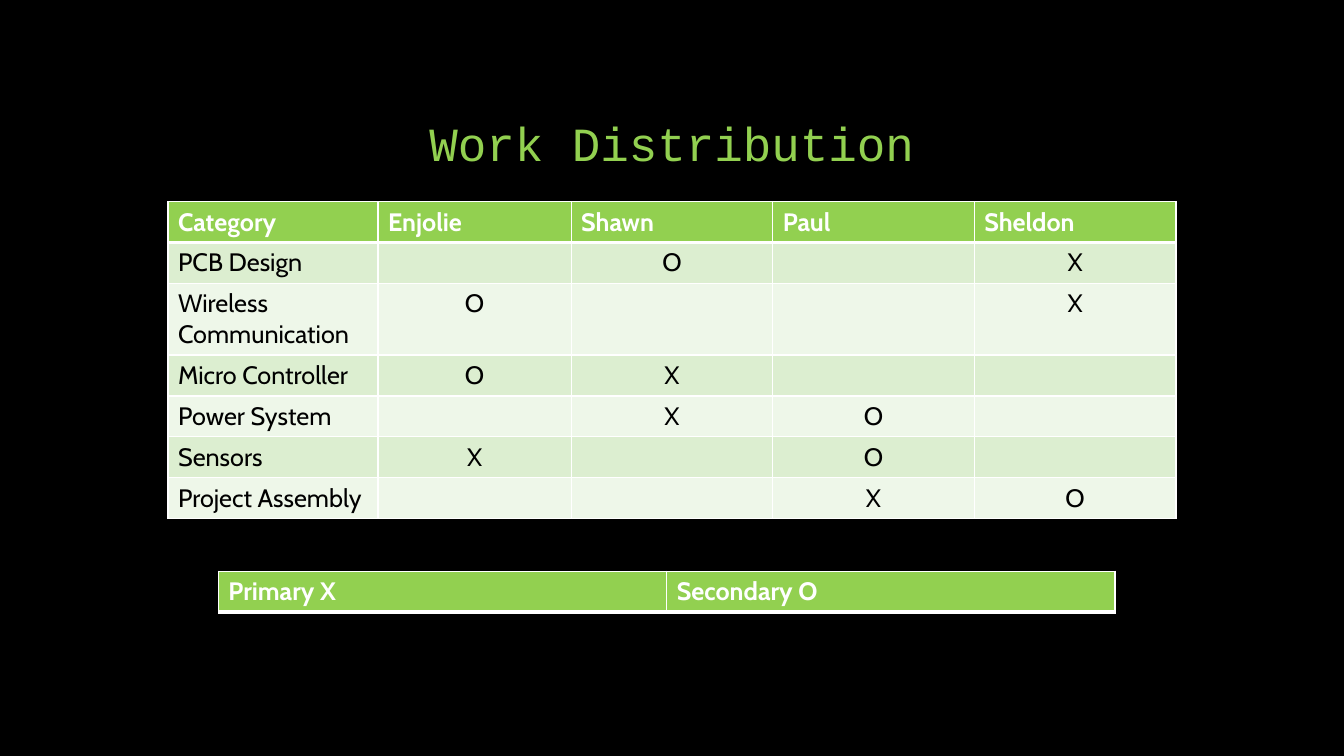
from dataclasses import dataclass

from lxml.etree import SubElement
from pptx import Presentation
from pptx.dml.color import RGBColor
from pptx.enum.text import MSO_ANCHOR, MSO_AUTO_SIZE, PP_ALIGN
from pptx.oxml.ns import qn
from pptx.slide import Slide
from pptx.table import _Cell
from pptx.text.text import TextFrame
from pptx.util import Emu, Pt

EMU_PER_PX = 9525
GREEN = "92D050"
WHITE = "FFFFFF"
BLACK = "000000"
BANDS = ("DCEED0", "EEF7E9")
ROW_HEIGHT = 39
THIN, THICK = 1, 3


@dataclass(frozen=True)
class Grid:
    left: int
    top: int
    columns: tuple[int, ...]
    rows: tuple[tuple[str, ...], ...]


ASSIGNMENTS = Grid(160, 192, (200, 184, 192, 192, 192), (
    ("Category", "Enjolie", "Shawn", "Paul", "Sheldon"),
    ("PCB Design", "", "O", "", "X"),
    ("Wireless Communication", "O", "", "", "X"),
    ("Micro Controller", "O", "X", "", ""),
    ("Power System", "", "X", "O", ""),
    ("Sensors", "X", "", "O", ""),
    ("Project Assembly", "", "", "X", "O"),
))
LEGEND = Grid(208, 544, (427, 427), (("Primary X", "Secondary O"),))


def px(length: int) -> Emu:
    return Emu(length * EMU_PER_PX)


def rgb(colour: str) -> RGBColor:
    return RGBColor.from_string(colour)


def write(frame: TextFrame, text: str, *, font: str = "Cabin", size: int = 18,
          colour: str = BLACK, bold: bool = False,
          align: PP_ALIGN = PP_ALIGN.LEFT, spacing: float = 1.0) -> None:
    paragraph = frame.paragraphs[0]
    paragraph.alignment = align
    paragraph.line_spacing = spacing
    run = paragraph.add_run()
    run.text = text
    run.font.name = font
    run.font.size = Pt(size)
    run.font.bold = bold
    run.font.color.rgb = rgb(colour)


def add_borders(cell: _Cell, top: int, bottom: int) -> None:
    properties = cell._tc.get_or_add_tcPr()
    for side, width in (("L", THIN), ("R", THIN), ("T", top), ("B", bottom)):
        border = SubElement(properties, qn(f"a:ln{side}"), w=str(Pt(width)))
        fill = SubElement(border, qn("a:solidFill"))
        SubElement(fill, qn("a:srgbClr"), val=WHITE)


def add_grid(slide: Slide, grid: Grid) -> None:
    table = slide.shapes.add_table(
        len(grid.rows), len(grid.columns), px(grid.left), px(grid.top),
        px(sum(grid.columns)), px(ROW_HEIGHT * len(grid.rows))).table
    table.horz_banding = False
    for column, width in zip(table.columns, grid.columns):
        column.width = px(width)
    for row, texts in enumerate(grid.rows):
        header = row == 0
        for column, text in enumerate(texts):
            cell = table.cell(row, column)
            add_borders(cell, THICK if row == 1 else THIN, THICK if header else THIN)
            cell.fill.solid()
            cell.fill.fore_color.rgb = rgb(GREEN if header else BANDS[(row - 1) % 2])
            if text:
                centred = not header and column > 0
                write(cell.text_frame, text, bold=header,
                      colour=WHITE if header else BLACK,
                      align=PP_ALIGN.CENTER if centred else PP_ALIGN.LEFT)


def add_title(slide: Slide, text: str) -> None:
    heading = slide.shapes.title
    heading.left, heading.top = px(160), px(48)
    heading.width, heading.height = px(960), px(120)
    frame = heading.text_frame
    frame.word_wrap = True
    frame.auto_size = MSO_AUTO_SIZE.NONE
    frame.vertical_anchor = MSO_ANCHOR.BOTTOM
    write(frame, text, font="Courier New", size=34, colour=GREEN,
          align=PP_ALIGN.CENTER, spacing=0.9)


def main() -> None:
    presentation = Presentation()
    presentation.slide_width, presentation.slide_height = px(1280), px(720)
    slide = presentation.slides.add_slide(presentation.slide_layouts[5])
    slide.background.fill.solid()
    slide.background.fill.fore_color.rgb = rgb(BLACK)
    add_title(slide, "Work Distribution")
    for grid in (ASSIGNMENTS, LEGEND):
        add_grid(slide, grid)
    presentation.save("out.pptx")


if __name__ == "__main__":
    main()
